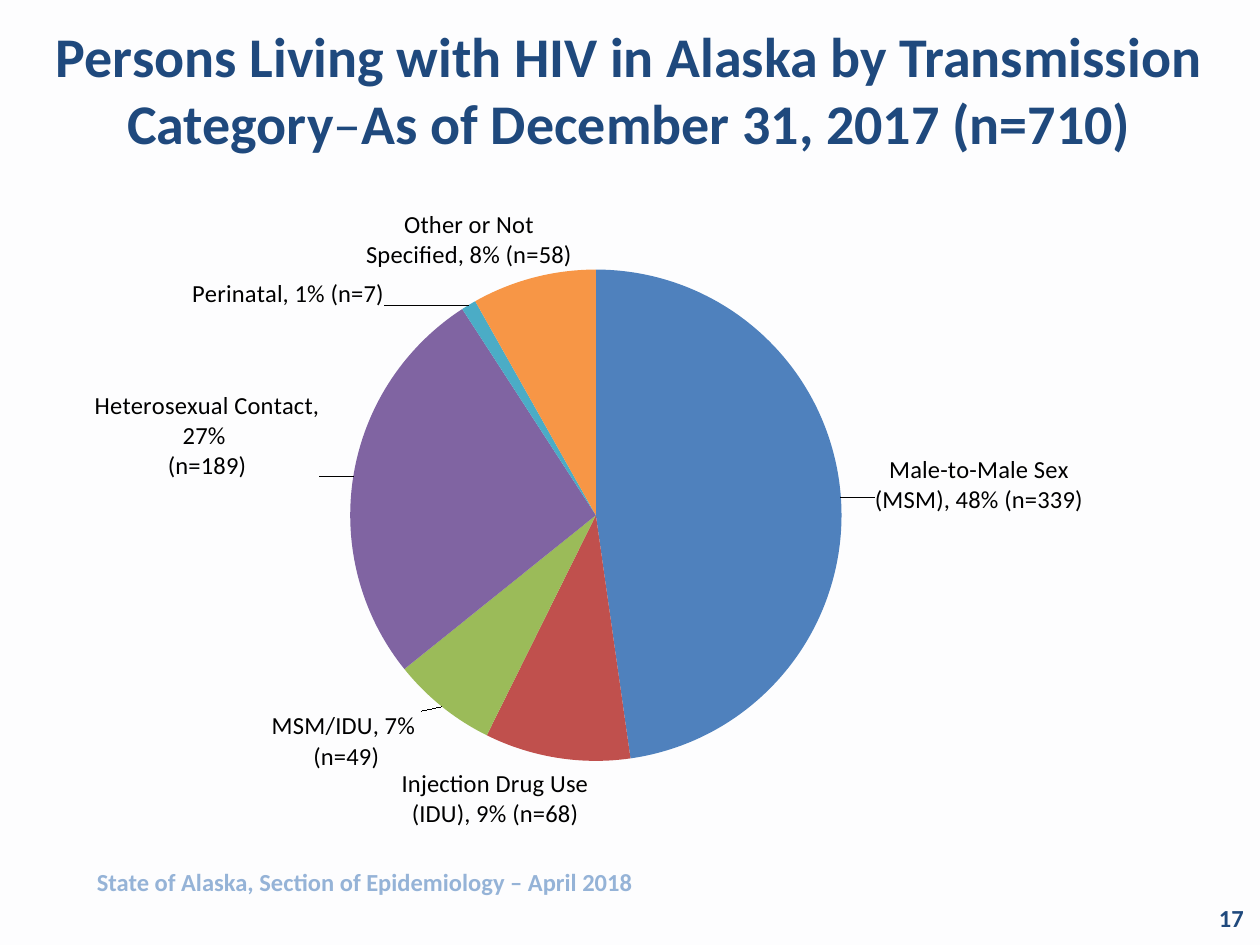
from lxml import etree
from pptx import Presentation
from pptx.chart.data import CategoryChartData
from pptx.dml.color import RGBColor
from pptx.enum.chart import XL_CHART_TYPE, XL_LABEL_POSITION
from pptx.enum.text import MSO_ANCHOR, PP_ALIGN
from pptx.oxml.ns import qn
from pptx.util import Inches, Pt

PIE = XL_CHART_TYPE.PIE
OUTER = XL_LABEL_POSITION.OUTSIDE_END
TOP, MIDDLE = MSO_ANCHOR.TOP, MSO_ANCHOR.MIDDLE
LEFT, CENTER, RIGHT = PP_ALIGN.LEFT, PP_ALIGN.CENTER, PP_ALIGN.RIGHT
FONT, NAVY, PALE, BLACK = "Calibri", "1F497D", "95B3D7", "000000"
C15 = "http://schemas.microsoft.com/office/drawing/2012/chart"
EXT_ID = "{CE6537A1-D6FC-4f65-9D91-7224C49458BB}"
WIDE, HIGH = 9, 5.2

GROUPS = [
    ("Male-to-Male Sex (MSM)", 339, "4F81BD", ", 48% (n=339)", 0.21, -0.1),
    ("Injection Drug Use (IDU)", 68, "C0504D", ", 9% (n=68)", 0.26, 0.03),
    ("MSM/IDU", 49, "9BBB59", ", 7% \n(n=49)", -0.13, -0.01),
    ("Heterosexual Contact", 189, "8064A2", ", 27% \n(n=189)", -0.21, 0.05),
    ("Perinatal", 7, "4BACC6", ", 1% (n=7)", -0.64, 0.08),
    ("Other or Not Specified", 58, "F79646", ", 8% (n=58)", 0.32, 0),
]
NARROW = {"Heterosexual Contact": (1.17, 0.72)}


def color(code):
    return RGBColor.from_string(code)


def layout(tag=qn("c:layout"), **items):
    root = etree.Element(tag)
    frame = etree.SubElement(root, qn("c:manualLayout"))
    for name, value in items.items():
        etree.SubElement(frame, qn(f"c:{name}")).set("val", str(value))
    return root


class Deck:
    """Holds the text style and the current slide."""

    def __init__(self, show):
        self.slide = show.slides.add_slide(show.slide_layouts[6])
        fill = self.slide.background.fill
        fill.solid()
        fill.fore_color.rgb = color("DCE6F2")
        tint = self.slide._element.find(".//" + qn("a:srgbClr"))
        etree.SubElement(tint, qn("a:alpha")).set("val", "5000")

    def style(self, font, size, code, bold=False):
        font.name, font.size, font.bold = FONT, Pt(size), bold
        font.color.rgb = color(code)

    def text(self, box, parts, size, code, align=LEFT, anchor=TOP):
        frame = self.slide.shapes.add_textbox(*map(Inches, box)).text_frame
        frame.word_wrap = True
        frame.vertical_anchor = anchor
        para = frame.paragraphs[0]
        para.alignment = align
        for words, bold in parts:
            run = para.add_run()
            run.text = words
            self.style(run.font, size, code, bold)

    def pie(self, spot, groups):
        data = CategoryChartData()
        data.categories = [group[0] for group in groups]
        data.add_series("Series 1", [group[1] for group in groups])
        box = map(Inches, (*spot, WIDE, HIGH))
        chart = self.slide.shapes.add_chart(PIE, *box, data).chart
        chart.has_legend = chart.has_title = False
        self.style(chart.font, 18, BLACK)
        plot = chart.plots[0]
        plot.vary_by_categories = True
        series = plot.series[0]
        labels = series.data_labels
        self.style(labels.font, 14, BLACK)
        labels.position = OUTER
        labels.show_value = True
        labels.show_percentage = labels.show_category_name = True
        for index, group in enumerate(groups):
            self.slice(series.points[index], group)
        for label, group in zip(series._element.iter(qn("c:dLbl")), groups):
            self.place(label, group)
        area = chart._chartSpace.find(".//" + qn("c:plotArea"))
        for old in area.findall(qn("c:layout")):
            area.remove(old)
        area.insert(0, layout(layoutTarget="inner", xMode="edge", yMode="edge",
                              x=2.28 / WIDE, y=0.64 / HIGH,
                              w=3.9 / WIDE, h=3.9 / HIGH))

    def slice(self, point, group):
        name, _, code, tail, _, _ = group
        point.format.fill.solid()
        point.format.fill.fore_color.rgb = color(code)
        label = point.data_label
        label.text_frame.text = name + tail
        label.position = OUTER
        for para in label.text_frame.paragraphs:
            for run in para.runs:
                self.style(run.font, 14, BLACK)

    def place(self, label, group):
        name, *_, left, top = group
        label.insert(1, layout(x=left / WIDE, y=top / HIGH))
        for flag in ("c:showVal", "c:showCatName", "c:showPercent"):
            label.find(qn(flag)).set("val", "1")
        if name in NARROW:
            wide, high = NARROW[name]
            exts = etree.SubElement(label, qn("c:extLst"))
            ext = etree.SubElement(exts, qn("c:ext"), nsmap={"c15": C15})
            ext.set("uri", EXT_ID)
            ext.append(layout(f"{{{C15}}}layout", w=wide / WIDE, h=high / HIGH))


def main():
    show = Presentation()
    show.slide_width, show.slide_height = Inches(10), Inches(7.5)
    deck = Deck(show)
    title = [("Persons Living with HIV in Alaska by Transmission Category", True),
             ("–", False), ("As of December 31, 2017 (n=710)", True)]
    deck.text((0.33, 0.08, 9.33, 1.25), title, 32, NAVY, CENTER, MIDDLE)
    deck.text((7.64, 7.08, 2.33, 0.4), [("17", True)], 14, NAVY, RIGHT, MIDDLE)
    source = "State of Alaska, Section of Epidemiology – April 2018"
    deck.text((0.67, 6.83, 7, 0.34), [(source, True)], 14, PALE)
    deck.pie((0.5, 1.5), GROUPS)
    show.save("out.pptx")


if __name__ == "__main__":
    main()
